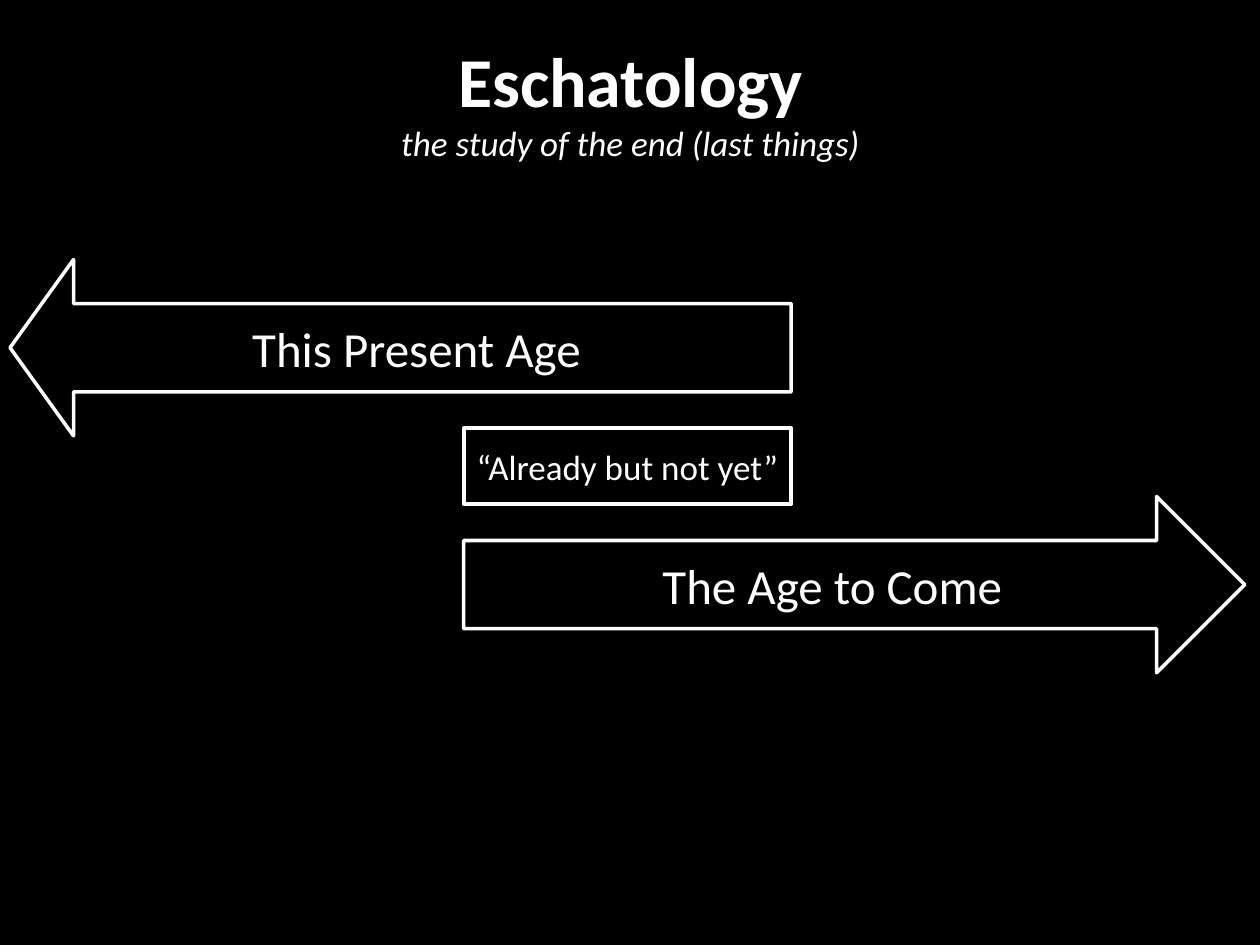
from pptx import Presentation
from pptx.dml.color import RGBColor
from pptx.enum.shapes import MSO_SHAPE as SHAPE
from pptx.enum.text import MSO_ANCHOR as ANCHOR, PP_ALIGN as ALIGN
from pptx.util import Inches, Pt

WHITE, BLACK = "FFFFFF", "000000"


def rgb(value):
    return RGBColor.from_string(value)


def add_text(p, text, size, bold=False, italic=False, color=WHITE, after=0):
    p.alignment = ALIGN.CENTER
    p.space_after = Pt(after)
    r = p.add_run()
    r.text = text
    r.font.name = "Calibri"
    r.font.size = Pt(size)
    r.font.bold = bold
    r.font.italic = italic
    r.font.color.rgb = rgb(color)


prs = Presentation()
prs.slide_width, prs.slide_height = Inches(10), Inches(7.5)
s = prs.slides.add_slide(prs.slide_layouts[6])
s.background.fill.solid()
s.background.fill.fore_color.rgb = rgb(BLACK)

# Heading
tf = s.shapes.add_textbox(Inches(0.17), Inches(0.25), Inches(9.67), Inches(6.83)).text_frame
tf.word_wrap = True
add_text(tf.paragraphs[0], "Eschatology", 40, bold=True)
add_text(tf.add_paragraph(), "the study of the end (last things)", 20, italic=True, after=12)

# The two ages and their overlap, which runs from overlap_left to the end of the present age
overlap_left, overlap_width = 3.68, 2.6
arrow_width, arrow_height = 6.2, 1.4
present_left = overlap_left + overlap_width - arrow_width
diagram = [
    (SHAPE.RECTANGLE, overlap_left, 3.4, overlap_width, 0.6, "“Already but not yet”", 20, 2.25),
    (SHAPE.LEFT_ARROW, present_left, 2.06, arrow_width, arrow_height, "This Present Age", 28, 2),
    (SHAPE.RIGHT_ARROW, overlap_left, 3.94, arrow_width, arrow_height, "The Age to Come", 28, 2),
]
for kind, left, top, width, height, text, size, line_width in diagram:
    sp = s.shapes.add_shape(kind, Inches(left), Inches(top), Inches(width), Inches(height))
    sp.shadow.inherit = False
    sp.fill.background()
    sp.line.color.rgb = rgb(WHITE)
    sp.line.width = Pt(line_width)
    tf = sp.text_frame
    tf.vertical_anchor = ANCHOR.MIDDLE
    tf.word_wrap = kind != SHAPE.RECTANGLE
    if kind != SHAPE.RECTANGLE:
        tf.margin_left = tf.margin_right = Inches(0.2)
        tf.margin_top = tf.margin_bottom = Inches(0.1)
    if kind == SHAPE.LEFT_ARROW:
        sp.adjustments[1] = 0.36
    add_text(tf.paragraphs[0], text, size)

prs.save("out.pptx")
